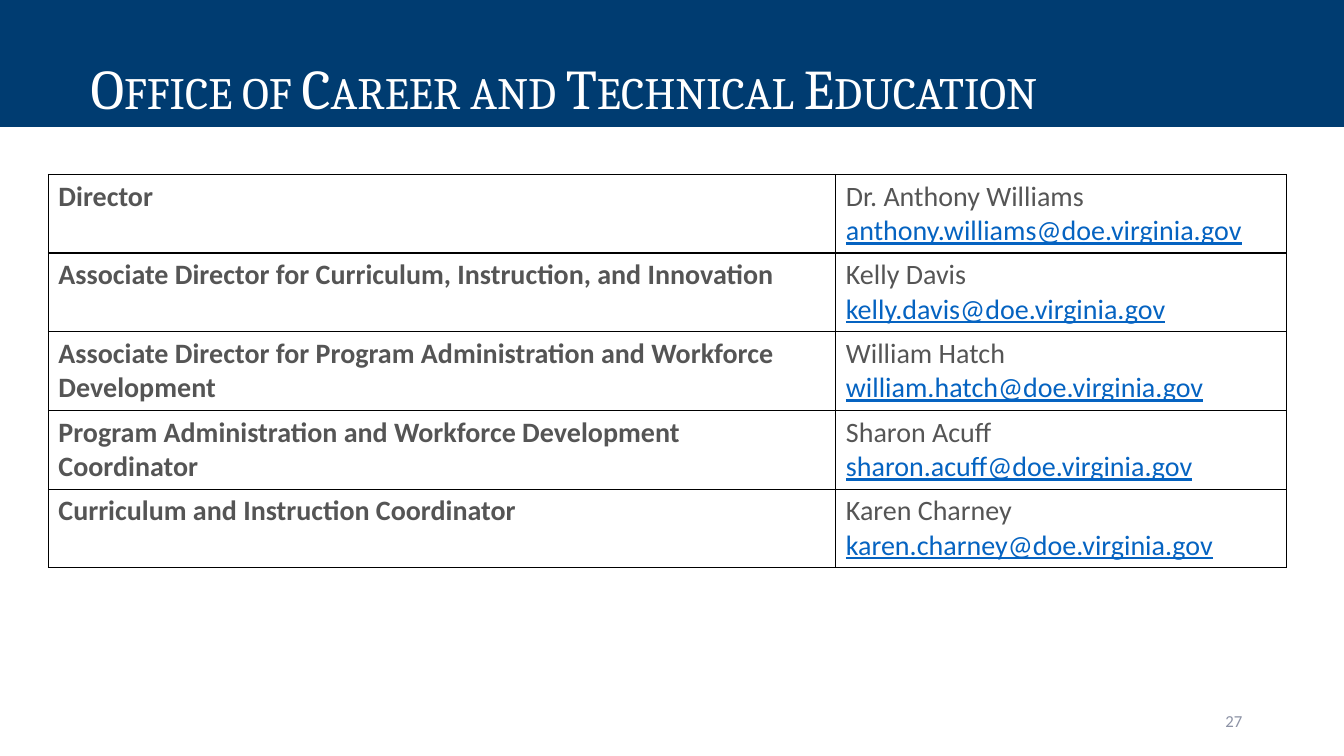
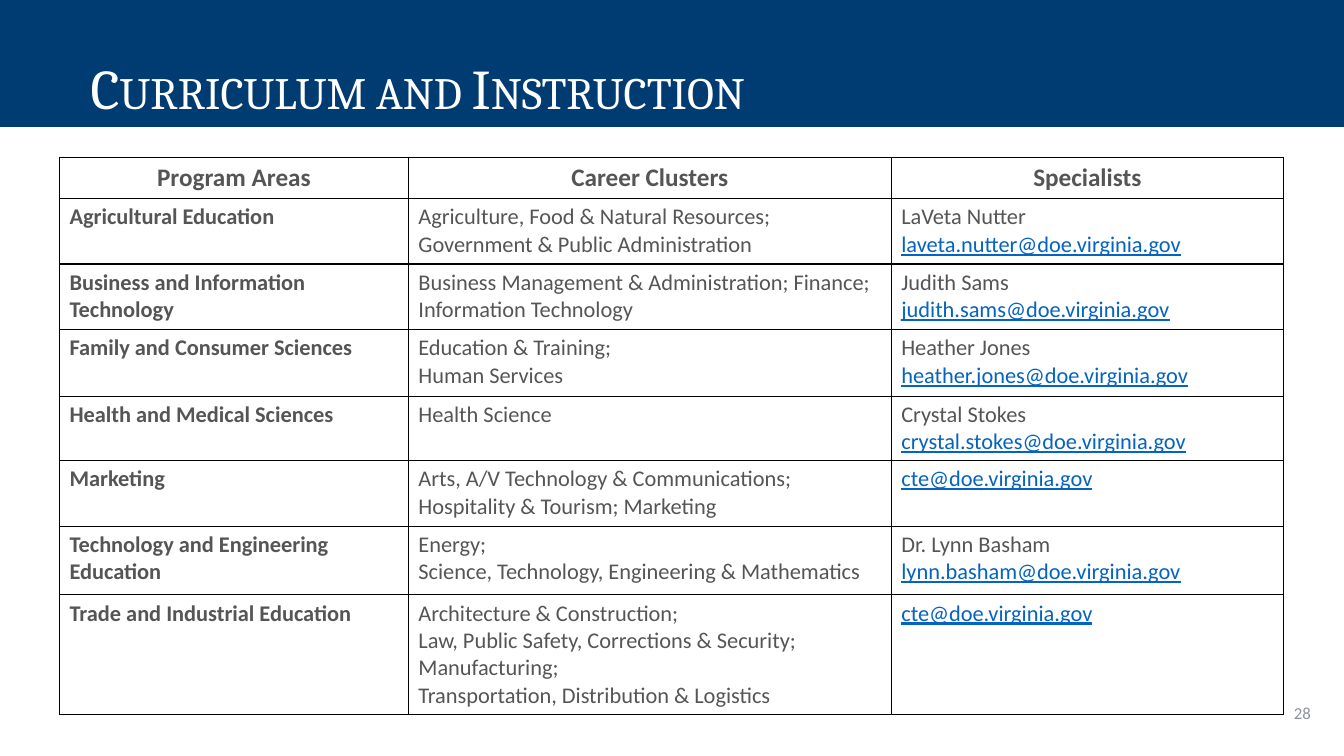
from lxml import etree
from pptx import Presentation
from pptx.dml.color import RGBColor
from pptx.enum.shapes import MSO_SHAPE
from pptx.enum.text import MSO_ANCHOR, PP_ALIGN
from pptx.oxml.ns import qn
from pptx.util import Inches, Pt

RECTANGLE = MSO_SHAPE.RECTANGLE
LEFT, CENTER, RIGHT = PP_ALIGN.LEFT, PP_ALIGN.CENTER, PP_ALIGN.RIGHT
MIDDLE, BOTTOM = MSO_ANCHOR.MIDDLE, MSO_ANCHOR.BOTTOM

NAVY, WHITE, BLACK = "003C71", "FFFFFF", "000000"
BODY_GRAY, NUMBER_GRAY, LINK_BLUE = "555555", "8C92A5", "0563C1"
TITLE_FONT, BODY_FONT = "Cambria", "Calibri"
SLIDE_WIDTH, SLIDE_HEIGHT = 13.33, 7.5
BAND_HEIGHT = 1.26
MAIL_DOMAIN = "@doe.virginia.gov"

OFFICE_STAFF = [
    ("Director", "Dr. Anthony Williams", "anthony.williams"),
    ("Associate Director for Curriculum, Instruction, and Innovation",
     "Kelly Davis", "kelly.davis"),
    ("Associate Director for Program Administration and Workforce Development",
     "William Hatch", "william.hatch"),
    ("Program Administration and Workforce Development Coordinator",
     "Sharon Acuff", "sharon.acuff"),
    ("Curriculum and Instruction Coordinator", "Karen Charney", "karen.charney"),
]

PROGRAM_HEADER = ["Program Areas", "Career Clusters", "Specialists"]
PROGRAMS = [
    ("Agricultural Education",
     ["Agriculture, Food & Natural Resources; Government & Public Administration"],
     "LaVeta Nutter", "laveta.nutter"),
    ("Business and Information Technology",
     ["Business Management & Administration; Finance; Information Technology"],
     "Judith Sams", "judith.sams"),
    ("Family and Consumer Sciences", ["Education & Training;", "Human Services"],
     "Heather Jones", "heather.jones"),
    ("Health and Medical Sciences", ["Health Science"],
     "Crystal Stokes", "crystal.stokes"),
    ("Marketing",
     ["Arts, A/V Technology & Communications;", "Hospitality & Tourism; Marketing"],
     None, "cte"),
    ("Technology and Engineering Education",
     ["Energy;", "Science, Technology, Engineering & Mathematics"],
     "Dr. Lynn Basham", "lynn.basham"),
    ("Trade and Industrial Education",
     ["Architecture & Construction;", "Law, Public Safety, Corrections & Security;",
      "Manufacturing;", "Transportation, Distribution & Logistics"],
     None, "cte"),
]


def color(hex_code):
    return RGBColor.from_string(hex_code)


def write(frame, lines, size, font=BODY_FONT, ink=BODY_GRAY, bold=False,
          align=LEFT, spacing=None, small_caps=False):
    """Write one paragraph per line; mail addresses look like links."""
    frame.word_wrap = True
    for index, line in enumerate(lines):
        paragraph = frame.add_paragraph() if index else frame.paragraphs[0]
        paragraph.alignment = align
        if spacing:
            paragraph.line_spacing = spacing
        run = paragraph.add_run()
        run.text = line
        is_mail = MAIL_DOMAIN in line
        run.font.name, run.font.size, run.font.bold = font, Pt(size), bold
        run.font.color.rgb = color(LINK_BLUE if is_mail else ink)
        if is_mail:
            run.font.underline = True
        if small_caps:
            run.font._element.set("cap", "small")


def add_title_band(slide, title):
    band = slide.shapes.add_shape(
        RECTANGLE, 0, 0, Inches(SLIDE_WIDTH), Inches(BAND_HEIGHT))
    band.shadow.inherit = False
    band.fill.solid()
    band.fill.fore_color.rgb = color(NAVY)
    band.line.fill.background()
    frame = band.text_frame
    frame.vertical_anchor = BOTTOM
    frame.margin_left = Inches(0.9)
    write(frame, [title], 40, font=TITLE_FONT, ink=WHITE, spacing=0.9,
          small_caps=True)


def add_page_number(slide, number, left, top):
    box = slide.shapes.add_textbox(
        Inches(left), Inches(top), Inches(3), Inches(0.4))
    box.text_frame.vertical_anchor = MIDDLE
    write(box.text_frame, [str(number)], 12, ink=NUMBER_GRAY, align=RIGHT)


def style_cell(cell):
    """White fill and a thin black line on all four sides."""
    cell.fill.solid()
    cell.fill.fore_color.rgb = color(WHITE)
    properties = cell._tc.get_or_add_tcPr()
    for index, side in enumerate(("a:lnL", "a:lnR", "a:lnT", "a:lnB")):
        border = etree.Element(qn(side), w=str(Pt(1)))
        fill = etree.SubElement(border, qn("a:solidFill"))
        etree.SubElement(fill, qn("a:srgbClr"), val=BLACK)
        properties.insert(index, border)


def add_grid(slide, left, top, widths, heights, rows, size, header=None):
    """Place a bordered table; the first column and the header are bold."""
    all_rows = ([[[label] for label in header]] if header else []) + rows
    table = slide.shapes.add_table(
        len(all_rows), len(widths), Inches(left), Inches(top),
        Inches(sum(widths)), Inches(sum(heights))).table
    table.first_row = table.horz_banding = False
    for column, width in zip(table.columns, widths):
        column.width = Inches(width)
    for r, (cells, height) in enumerate(zip(all_rows, heights)):
        table.rows[r].height = Inches(height)
        in_header = bool(header) and r == 0
        for c, lines in enumerate(cells):
            cell = table.cell(r, c)
            style_cell(cell)
            write(cell.text_frame, lines, size + 2 if in_header else size,
                  bold=in_header or c == 0, align=CENTER if in_header else LEFT)


def contact(name, mailbox):
    address = mailbox + MAIL_DOMAIN
    return [name, address] if name else [address]


def new_slide(deck, title):
    slide = deck.slides.add_slide(deck.slide_layouts[6])
    add_title_band(slide, title)
    return slide


def build_office(deck):
    slide = new_slide(deck, "Office of Career and Technical Education")
    rows = [[[role], contact(name, mailbox)] for role, name, mailbox in OFFICE_STAFF]
    add_grid(slide, 0.48, 1.73, [7.81, 4.47], [0.78] * len(rows), rows, 20)
    add_page_number(slide, 27, 9.42, 6.95)


def build_curriculum(deck):
    slide = new_slide(deck, "Curriculum and Instruction")
    rows = [[[area], clusters, contact(name, mailbox)]
            for area, clusters, name, mailbox in PROGRAMS]
    heights = [0.41, 0.65, 0.65, 0.66, 0.64, 0.65, 0.68, 1.19]
    add_grid(slide, 0.59, 1.56, [3.46, 4.79, 3.89], heights, rows, 16,
             header=PROGRAM_HEADER)
    add_page_number(slide, 28, 10.1, 6.87)


def main():
    deck = Presentation()
    deck.slide_width = Inches(SLIDE_WIDTH)
    deck.slide_height = Inches(SLIDE_HEIGHT)
    build_office(deck)
    build_curriculum(deck)
    deck.save("out.pptx")


if __name__ == "__main__":
    main()
